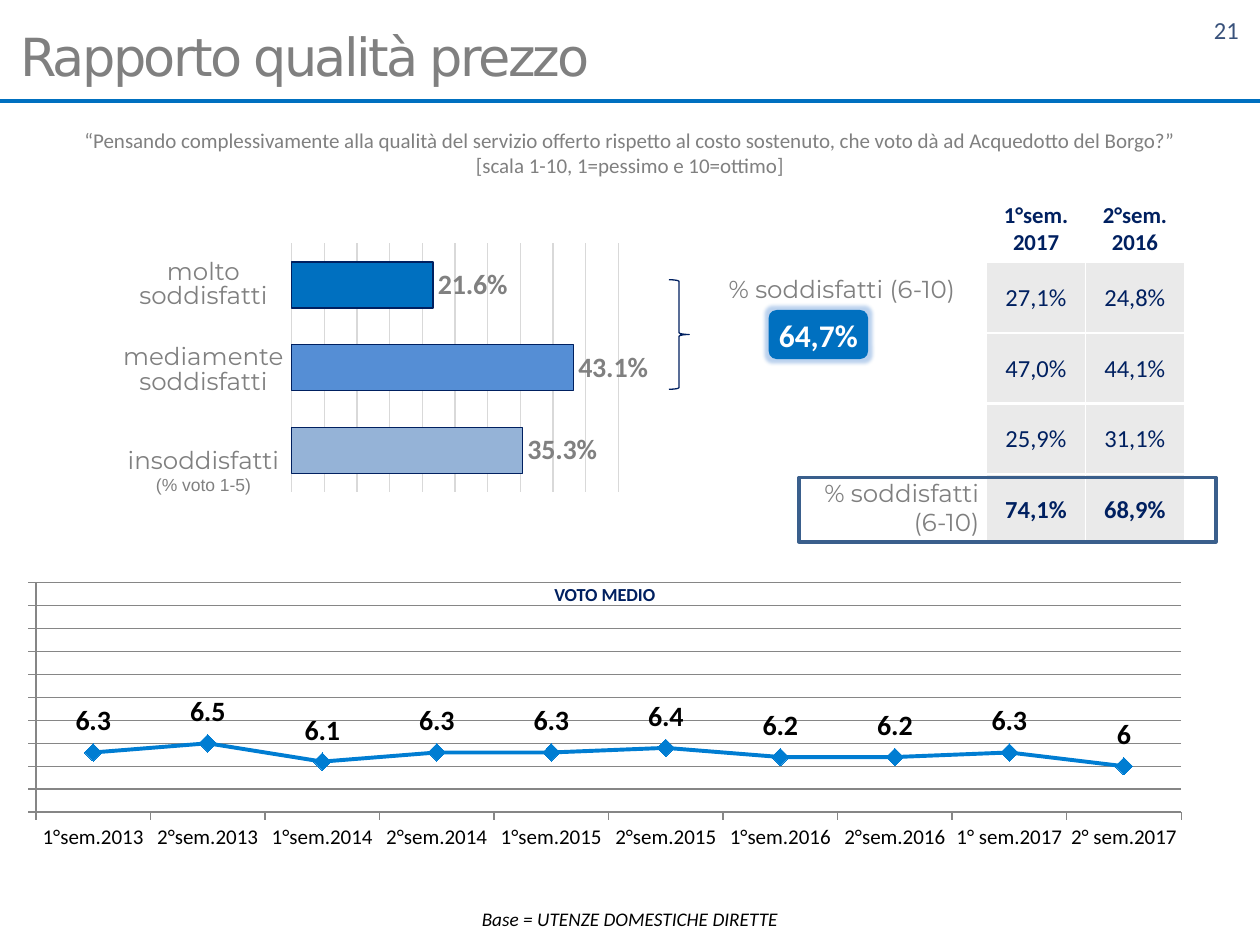
from dataclasses import dataclass

from lxml import etree
from pptx import Presentation, util as u
from pptx.chart import data
from pptx.dml.color import RGBColor
from pptx.enum import chart as ch, shapes, text
from pptx.oxml import parse_xml
from pptx.oxml.ns import nsdecls, qn


@dataclass(frozen=True)
class Theme:
    blue: str = "0070C0"
    line: str = "007DD2"
    navy: str = "002060"
    frame: str = "3A5F8C"
    page: str = "39527B"
    gray: str = "808080"
    grid: str = "D9D9D9"
    axis: str = "868686"
    cell: str = "EAEAEA"
    white: str = "FFFFFF"
    black: str = "000000"
    bars: tuple = ("0070C0", "558ED5", "95B3D7")
    head: str = "DejaVu Sans"
    body: str = "Calibri"
    label: str = "Montserrat"
    note: str = "Arial"
    title: float = 30
    big: float = 18
    value: float = 16
    base: float = 14
    small: float = 12
    tiny: float = 10


T = Theme()
CELL = u.Inches(0.1)  # grid: 100 columns by 75 rows
MID, LEFT, RIGHT = text.PP_ALIGN.CENTER, text.PP_ALIGN.LEFT, text.PP_ALIGN.RIGHT
PAD = (0.1, 0.05, 0.1, 0.05)
FLAT = (0.1, 0, 0.1, 0)


def rgb(code):
    return RGBColor.from_string(code)


def place(box):
    return [round(v * CELL) for v in box]


def sub(box, x, y, w, h):
    return box[0] + x, box[1] + y, w, h


def style(font, size, color, face=T.body, bold=False, italic=False):
    font.size, font.name, font.bold, font.italic = u.Pt(size), face, bold, italic
    font.color.rgb = rgb(color)


def fill_text(frame, words, size=T.base, color=T.gray, face=T.body, bold=False,
              italic=False, align=MID, lead=None, track=None):
    for i, line in enumerate(words.split("\n")):
        para = frame.paragraphs[0] if i == 0 else frame.add_paragraph()
        para.alignment = align
        if lead:
            para.line_spacing = u.Pt(lead)
        run = para.add_run()
        run.text = line
        style(run.font, size, color, face, bold, italic)
        if track:
            run.font._element.set("spc", str(track))


def write(slide, box, words, pad=PAD, mid=False, **form):
    frame = slide.shapes.add_textbox(*place(box)).text_frame
    set_frame(frame, pad, mid)
    fill_text(frame, words, **form)
    return frame


def set_frame(frame, pad, mid):
    frame.word_wrap = True
    (frame.margin_left, frame.margin_top,
     frame.margin_right, frame.margin_bottom) = [u.Inches(v) for v in pad]
    frame.vertical_anchor = text.MSO_ANCHOR.MIDDLE if mid else text.MSO_ANCHOR.TOP


def draw(slide, kind, box, fill=None, line=None, width=1.0):
    shape = slide.shapes.add_shape(kind, *place(box))
    shape.shadow.inherit = False
    if fill:
        shape.fill.solid()
        shape.fill.fore_color.rgb = rgb(fill)
    else:
        shape.fill.background()
    if line:
        shape.line.color.rgb, shape.line.width = rgb(line), u.Pt(width)
    else:
        shape.line.fill.background()
    return shape


def set_plot(chart, x, y, w, h):
    """Fix the inner plot area as shares of the chart."""
    area = chart._chartSpace.chart.plotArea
    for old in area.findall(qn("c:layout")):
        area.remove(old)
    spots = "".join(f'<c:{k} val="{v}"/>' for k, v in zip("xywh", (x, y, w, h)))
    area.insert(0, parse_xml(
        f'<c:layout {nsdecls("c")}><c:manualLayout><c:layoutTarget val="inner"/>'
        f'<c:xMode val="edge"/><c:yMode val="edge"/>{spots}</c:manualLayout></c:layout>'))


def add_chart(slide, kind, box, cats, vals, size, plot):
    info = data.CategoryChartData()
    info.categories = cats
    info.add_series("Voto", vals)
    chart = slide.shapes.add_chart(kind, *place(box), info).chart
    chart.has_legend = chart.has_title = False
    style(chart.font, size, T.black)
    chart.plots[0].vary_by_categories = False
    set_plot(chart, *plot)
    return chart, chart.plots[0].series[0]


def set_scale(axis, low, high, step, color):
    axis.minimum_scale, axis.maximum_scale, axis.major_unit = low, high, step
    axis.has_major_gridlines = True
    rule = axis.major_gridlines.format.line
    rule.color.rgb, rule.width = rgb(color), u.Pt(0.75)


def set_labels(part, color, code, spot):
    tags = part.data_labels
    tags.show_value, tags.position = True, spot
    tags.number_format, tags.number_format_is_linked = code, False
    style(tags.font, T.value, color, bold=True)


def add_header(slide, box):
    x, y, w, h = box
    rule = slide.shapes.add_connector(
        shapes.MSO_CONNECTOR.STRAIGHT, *place((x, y + h, x + w, y + h)))
    rule.line.color.rgb, rule.line.width = rgb(T.blue), u.Pt(2)
    etree.SubElement(rule._element.spPr, qn("a:effectLst"))
    write(slide, sub(box, 76, 0.7, 23.3, 4), "21", color=T.page, align=RIGHT)
    write(slide, sub(box, 0, 1.3, 97.2, 6.3), "Rapporto qualità prezzo", mid=True,
          pad=(0.16, 0.05, 0.1, 0.05), size=T.title, face=T.head, align=LEFT, track=-150)


def add_bars(slide, box):
    # Row names
    for y, words in ((2.4, "molto soddisfatti"), (9.2, "mediamente soddisfatti")):
        write(slide, sub(box, 0, y, 17.3, 6.1), words, face=T.label, lead=14)
    low = write(slide, sub(box, 0, 17, 17.3, 5.1), "insoddisfatti", face=T.label)
    para = low.add_paragraph()
    para.alignment = MID
    run = para.add_run()
    run.text = "(% voto 1-5)"
    style(run.font, T.tiny, T.gray, T.note)

    # Bars
    chart, bars = add_chart(slide, ch.XL_CHART_TYPE.BAR_CLUSTERED,
                            sub(box, 14.1, 0, 33.9, 22.8), ("1", "2", "3"),
                            (0.216, 0.431, 0.353), T.tiny, (0.046, 0.067, 0.765, 0.866))
    chart.plots[0].gap_width = 80
    set_scale(chart.value_axis, 0, 0.5, 0.05, T.grid)
    chart.category_axis.reverse_order = True
    chart.category_axis.visible = chart.value_axis.visible = False
    for i, color in enumerate(T.bars):
        form = bars.points[i].format
        form.fill.solid()
        form.fill.fore_color.rgb = rgb(color)
        form.line.color.rgb, form.line.width = rgb(T.navy), u.Pt(0.75)
    set_labels(bars, T.gray, "0.0%", ch.XL_LABEL_POSITION.OUTSIDE_END)

    # Sum of the satisfied
    kind = shapes.MSO_SHAPE
    draw(slide, kind.RIGHT_BRACE, sub(box, 45.6, 4.4, 1.6, 8.7), line=T.navy, width=0.75)
    write(slide, sub(box, 45.3, 3.6, 24, 3.1), "% soddisfatti (6-10)", pad=FLAT, mid=True,
          face=T.label, align=RIGHT)
    badge = draw(slide, kind.ROUNDED_RECTANGLE, sub(box, 53.5, 6.8, 7.9, 3.9), T.blue)
    badge._element.spPr.find(qn("a:effectLst")).append(parse_xml(
        f'<a:glow {nsdecls("a")} rad="50800"><a:srgbClr val="{T.bars[1]}">'
        '<a:alpha val="40000"/></a:srgbClr></a:glow>'))
    set_frame(badge.text_frame, (0, 0, 0, 0), True)
    fill_text(badge.text_frame, "64,7%", size=T.big, color=T.white, bold=True)


def set_edges(cell, top, base):
    edges = cell._tc.get_or_add_tcPr()
    for side, width in zip("LRTB", (1, 1, top, base)):
        edges.append(parse_xml(
            f'<a:ln{side} {nsdecls("a")} w="{u.Pt(width)}"><a:solidFill>'
            f'<a:srgbClr val="{T.white}"/></a:solidFill></a:ln{side}>'))


def add_terms(slide, box):
    rows = (("1°sem. 2017", "2°sem. 2016"), ("27,1%", "24,8%"), ("47,0%", "44,1%"),
            ("25,9%", "31,1%"), ("74,1%", "68,9%"))
    area = sub(box, 14.9, 0, 15.7, 27.8)
    table = slide.shapes.add_table(len(rows), 2, *place(area)).table
    table.first_row = table.horz_banding = False
    for col in table.columns:
        col.width = round(7.85 * CELL)
    for r, row in enumerate(rows):
        table.rows[r].height = round((5.6 if r else 4.3) * CELL)
        for c, words in enumerate(row):
            cell = table.cell(r, c)
            set_edges(cell, 2.25 if r == 3 else 1, 2.25 if r == 2 else 1)
            if r:
                cell.fill.solid()
                cell.fill.fore_color.rgb = rgb(T.cell)
            else:
                cell.fill.background()
            pad = (0.01, 0.01, 0.01, 0) if r else (0.04, 0.05, 0.04, 0.05)
            (cell.margin_left, cell.margin_top,
             cell.margin_right, cell.margin_bottom) = [u.Inches(v) for v in pad]
            cell.vertical_anchor = text.MSO_ANCHOR.MIDDLE
            fill_text(cell.text_frame, words, size=T.base if r else 13, color=T.navy,
                      bold=r in (0, 4))
    # Frame round the total
    draw(slide, shapes.MSO_SHAPE.RECTANGLE, sub(box, 0, 22.4, 33.1, 5.1), line=T.frame, width=2)
    write(slide, sub(box, -8.7, 23.2, 24, 3.1), "% soddisfatti\n(6-10)", pad=FLAT, mid=True,
          face=T.label, align=RIGHT)


def add_trend(slide, box):
    cats = [f"{n}°{' ' if y == 2017 else ''}sem.{y}" for y in range(2013, 2018) for n in (1, 2)]
    chart, line = add_chart(slide, ch.XL_CHART_TYPE.LINE_MARKERS, box, cats,
                            (6.3, 6.5, 6.1, 6.3, 6.3, 6.4, 6.2, 6.2, 6.3, 6),
                            T.big, (0.042, 0, 0.942, 0.661))
    set_scale(chart.value_axis, 5, 10, 0.5, T.axis)
    chart.value_axis.tick_label_position = ch.XL_TICK_LABEL_POSITION.NONE
    for axis in (chart.value_axis, chart.category_axis):
        axis.major_tick_mark = ch.XL_TICK_MARK.OUTSIDE
        axis.format.line.color.rgb = rgb(T.axis)
    style(chart.category_axis.tick_labels.font, T.small, T.black)
    line.smooth = False
    line.format.line.color.rgb, line.format.line.width = rgb(T.line), u.Pt(2.25)
    mark = line.marker
    mark.style, mark.size = ch.XL_MARKER_STYLE.DIAMOND, 10
    mark.format.fill.solid()
    mark.format.fill.fore_color.rgb = mark.format.line.color.rgb = rgb(T.line)
    set_labels(line, T.black, "General", ch.XL_LABEL_POSITION.ABOVE)
    write(slide, sub(box, 38.2, -0.2, 22, 2.6), "VOTO MEDIO", size=10.5, color=T.navy,
          bold=True, lead=11)


def add_base(slide, box):
    note = draw(slide, shapes.MSO_SHAPE.ROUNDED_RECTANGLE, box, T.white)
    set_frame(note.text_frame, (0, 0, 0, 0), True)
    fill_text(note.text_frame, "Base = UTENZE DOMESTICHE DIRETTE", size=11, color=T.black,
              italic=True)


def main():
    deck = Presentation()
    deck.slide_width, deck.slide_height = 100 * CELL, 75 * CELL
    slide = deck.slides.add_slide(deck.slide_layouts[6])
    add_header(slide, (0, 0, 100, 8))
    write(slide, (5.1, 9.6, 89.8, 5),
          "“Pensando complessivamente alla qualità del servizio offerto rispetto al costo "
          "sostenuto, che voto dà ad Acquedotto del Borgo?” [scala 1-10, 1=pessimo e 10=ottimo]",
          size=T.small)
    add_bars(slide, (7.5, 17.8, 61.5, 22.8))
    add_terms(slide, (63.4, 15.5, 33.1, 27.8))
    add_trend(slide, (-1.2, 46.2, 96.5, 27.6))
    add_base(slide, (37.6, 71.5, 24.8, 2.9))
    deck.save("out.pptx")


if __name__ == "__main__":
    main()
